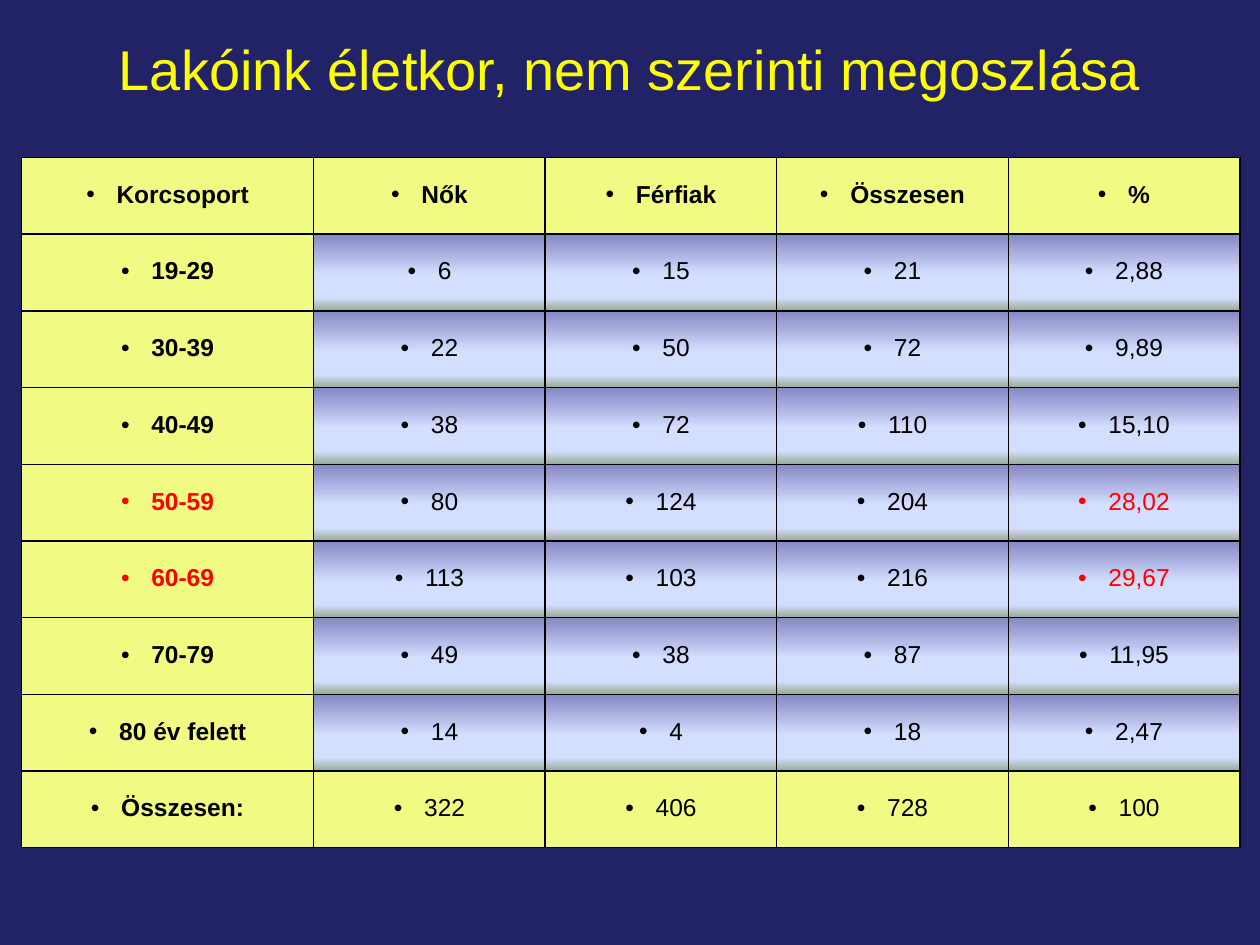
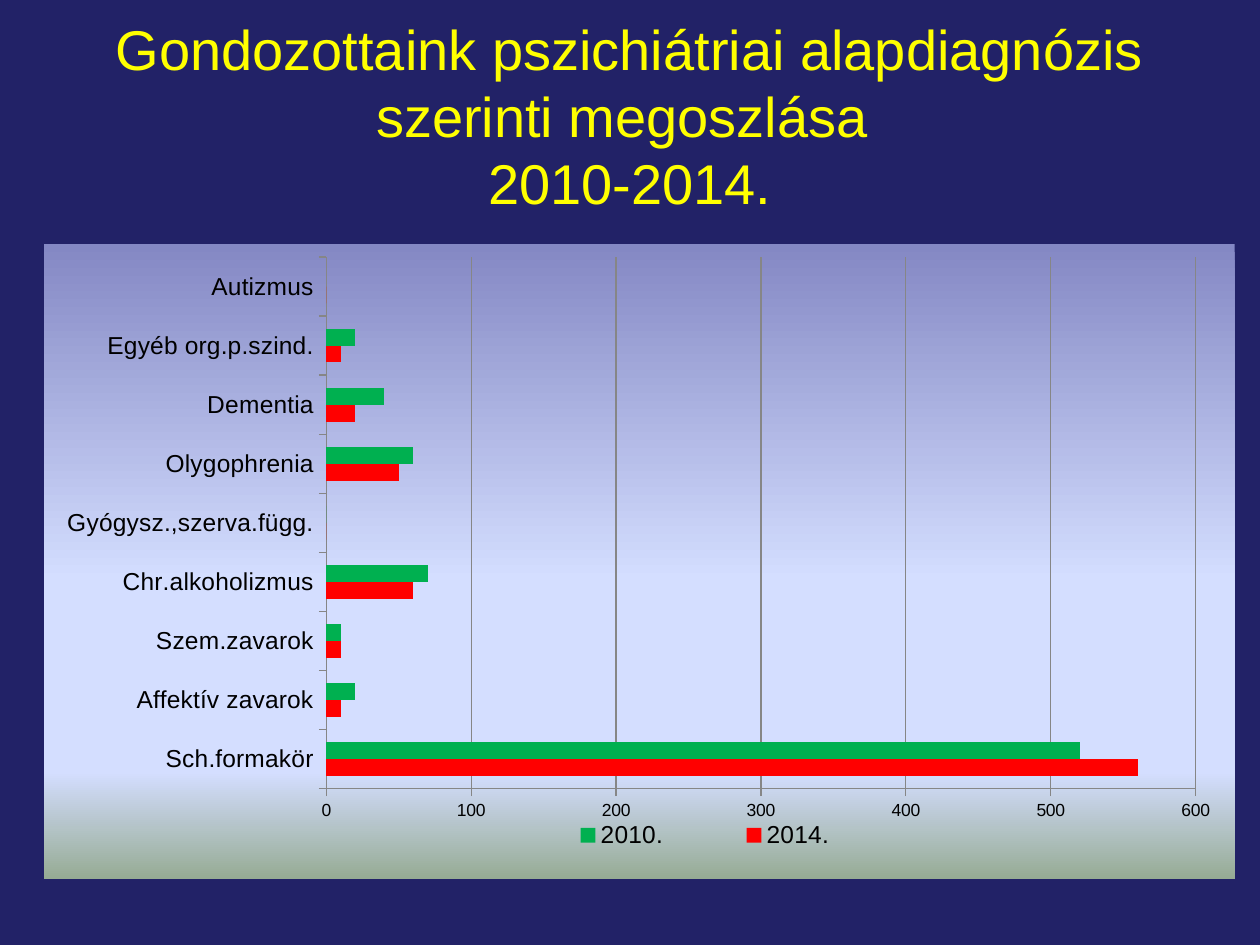
from dataclasses import dataclass

from lxml.etree import SubElement
from pptx import Presentation
from pptx.chart.data import CategoryChartData
from pptx.dml.color import RGBColor
from pptx.enum.chart import XL_CHART_TYPE as ChartType
from pptx.enum.chart import XL_LEGEND_POSITION as LegendPosition
from pptx.enum.chart import XL_TICK_MARK as TickMark
from pptx.enum.text import MSO_ANCHOR as Anchor
from pptx.enum.text import PP_ALIGN as Align
from pptx.oxml.ns import qn
from pptx.util import Inches, Pt

AGE_TITLE = "Lakóink életkor, nem szerinti megoszlása"
AGE_ROWS = [
    ("Korcsoport", "Nők", "Férfiak", "Összesen", "%"),
    ("19-29", "6", "15", "21", "2,88"),
    ("30-39", "22", "50", "72", "9,89"),
    ("40-49", "38", "72", "110", "15,10"),
    ("50-59", "80", "124", "204", "28,02"),
    ("60-69", "113", "103", "216", "29,67"),
    ("70-79", "49", "38", "87", "11,95"),
    ("80 év felett", "14", "4", "18", "2,47"),
    ("Összesen:", "322", "406", "728", "100"),
]
HIGHLIGHTED_AGES = {"50-59", "60-69"}
AGE_TABLE_BOX = (0.17, 1.25, 9.67, 5.48)
AGE_LABEL_WIDTH = 2.32
BULLET_INDENT = 0.24

DIAGNOSIS_TITLE = (
    "Gondozottaink pszichiátriai alapdiagnózis szerinti megoszlása \v2010-2014."
)
DIAGNOSES = [  # name, 2014, 2010
    ("Sch.formakör", 560, 520),
    ("Affektív zavarok", 10, 20),
    ("Szem.zavarok", 10, 10),
    ("Chr.alkoholizmus", 60, 70),
    ("Gyógysz.,szerva.függ.", 0, 0),
    ("Olygophrenia", 50, 60),
    ("Dementia", 20, 40),
    ("Egyéb org.p.szind.", 10, 20),
    ("Autizmus", 0, None),
]
DIAGNOSIS_CHART_BOX = (0.35, 1.94, 9.45, 5.04)
PLOT_BOX = (2.24, 0.1, 6.9, 4.22)  # inches inside the chart
LEGEND_BOX = (3.66, 4.54, 3.17, 0.3)


@dataclass(frozen=True)
class Theme:
    font: str = "Arial"
    background: str = "222267"
    title: str = "FFFF00"
    text: str = "000000"
    highlight: str = "FF0000"
    label_fill: str = "F1FA82"
    axis: str = "868686"
    series: tuple = (("2014.", "FF0000"), ("2010.", "00B050"))
    gradient: tuple = ((0, "8488C4"), (53, "D4DEFF"), (83, "D4DEFF"), (100, "96AB94"))
    title_size: int = 32
    body_size: int = 14
    axis_size: int = 10


THEME = Theme()


def rgb(value):
    return RGBColor.from_string(value)


def box_inches(box):
    return [Inches(length) for length in box]


def set_values(target, values):
    for name, value in values.items():
        setattr(target, name, value)


def style_font(font, size, color, bold=False):
    set_values(font, {"name": THEME.font, "size": Pt(size), "bold": bold})
    font.color.rgb = rgb(color)


def add_solid_fill(parent, color):
    SubElement(SubElement(parent, qn("a:solidFill")), qn("a:srgbClr"), val=color)


def add_gradient_fill(parent):
    """Append the theme's top-to-bottom gradient."""
    gradient = SubElement(parent, qn("a:gradFill"), rotWithShape="1")
    stops = SubElement(gradient, qn("a:gsLst"))
    for position, color in THEME.gradient:
        stop = SubElement(stops, qn("a:gs"), pos=str(position * 1000))
        SubElement(stop, qn("a:srgbClr"), val=color)
    SubElement(gradient, qn("a:lin"), ang="5400000", scaled="1")


def add_titled_slide(presentation, title, top, height):
    slide = presentation.slides.add_slide(presentation.slide_layouts[6])
    slide.background.fill.solid()
    slide.background.fill.fore_color.rgb = rgb(THEME.background)
    shape = slide.shapes.add_textbox(*box_inches((0.5, top, 9, height)))
    frame = shape.text_frame
    frame.word_wrap = True
    frame.vertical_anchor = Anchor.MIDDLE
    paragraph = frame.paragraphs[0]
    paragraph.text = title
    paragraph.alignment = Align.CENTER
    style_font(paragraph.font, THEME.title_size, THEME.title)
    for run in paragraph.runs:
        style_font(run.font, THEME.title_size, THEME.title)
    return slide


def write_cell(cell, text, color, bold):
    paragraph = cell.text_frame.paragraphs[0]
    set_values(paragraph, {"text": text, "alignment": Align.CENTER,
                           "line_spacing": 0.9, "space_before": Pt(4)})
    style_font(paragraph.runs[0].font, THEME.body_size, color, bold)
    properties = paragraph._p.get_or_add_pPr()
    properties.set("marL", str(Inches(BULLET_INDENT)))
    properties.set("indent", str(-Inches(BULLET_INDENT)))
    SubElement(properties, qn("a:buFont"), typeface=THEME.font)
    SubElement(properties, qn("a:buChar"), char="•")


def format_cell(cell, is_label):
    set_values(cell, {"vertical_anchor": Anchor.MIDDLE,
                      "margin_top": 0, "margin_bottom": 0,
                      "margin_left": Inches(0.07), "margin_right": Inches(0.07)})
    properties = cell._tc.get_or_add_tcPr()
    for side in ("a:lnL", "a:lnR", "a:lnT", "a:lnB"):
        add_solid_fill(SubElement(properties, qn(side), w=str(Pt(1))), THEME.text)
    if is_label:
        add_solid_fill(properties, THEME.label_fill)
    else:
        add_gradient_fill(properties)


def add_age_table(slide):
    row_count, column_count = len(AGE_ROWS), len(AGE_ROWS[0])
    table = slide.shapes.add_table(
        row_count, column_count, *box_inches(AGE_TABLE_BOX)).table
    table.first_row = table.horz_banding = False
    value_width = (AGE_TABLE_BOX[2] - AGE_LABEL_WIDTH) / (column_count - 1)
    for index, column in enumerate(table.columns):
        column.width = Inches(value_width if index else AGE_LABEL_WIDTH)
    for row_index, row in enumerate(AGE_ROWS):
        for column_index, text in enumerate(row):
            cell = table.cell(row_index, column_index)
            bold = row_index == 0 or column_index == 0
            highlighted = (row[0] in HIGHLIGHTED_AGES
                           and column_index in (0, column_count - 1))
            color = THEME.highlight if highlighted else THEME.text
            write_cell(cell, text, color, bold)
            format_cell(cell, bold or row_index == row_count - 1)


def set_layout(element, after, box, inner=False):
    """Place a chart part by its box in inches inside the chart."""
    for existing in element.findall(qn("c:layout")):
        element.remove(existing)
    layout = element.makeelement(qn("c:layout"), {})
    manual = SubElement(layout, qn("c:manualLayout"))
    if inner:
        SubElement(manual, qn("c:layoutTarget"), val="inner")
    for key in "xy":
        SubElement(manual, qn(f"c:{key}Mode"), val="edge")
    chart_size = DIAGNOSIS_CHART_BOX[2:] * 2
    for key, length, total in zip("xywh", box, chart_size):
        SubElement(manual, qn(f"c:{key}"), val=str(length / total))
    if after is None:
        element.insert(0, layout)
    else:
        after.addnext(layout)


def style_axis(axis, size):
    axis.major_tick_mark = TickMark.OUTSIDE
    axis.minor_tick_mark = TickMark.NONE
    style_font(axis.tick_labels.font, size, THEME.text)
    lines = [axis.format.line]
    if axis.has_major_gridlines:
        lines.append(axis.major_gridlines.format.line)
    for line in lines:
        line.color.rgb = rgb(THEME.axis)
        line.width = Pt(0.75)


def add_diagnosis_chart(slide):
    names, *series_values = zip(*DIAGNOSES)
    data = CategoryChartData()
    data.categories = names
    for (name, _), values in zip(THEME.series, series_values):
        data.add_series(name, values)
    chart = slide.shapes.add_chart(
        ChartType.BAR_CLUSTERED, *box_inches(DIAGNOSIS_CHART_BOX), data).chart
    chart.has_title = False
    style_font(chart.font, THEME.axis_size, THEME.text)

    plot = chart.plots[0]
    set_values(plot, {"gap_width": 150, "overlap": 0, "vary_by_categories": False})
    for series, (_, color) in zip(plot.series, THEME.series):
        series.format.fill.solid()
        series.format.fill.fore_color.rgb = rgb(color)

    chart.category_axis.has_major_gridlines = False
    set_values(chart.value_axis, {"has_major_gridlines": True, "minimum_scale": 0,
                                  "maximum_scale": 600, "major_unit": 100})
    style_axis(chart.category_axis, THEME.body_size)
    style_axis(chart.value_axis, THEME.axis_size)

    chart.has_legend = True
    legend = chart.legend
    legend.position = LegendPosition.BOTTOM
    legend.include_in_layout = False
    style_font(legend.font, THEME.body_size, THEME.text)

    chart_element = chart._chartSpace.find(qn("c:chart"))
    set_layout(chart_element.find(qn("c:plotArea")), None, PLOT_BOX, inner=True)
    legend_element = chart_element.find(qn("c:legend"))
    set_layout(legend_element, legend_element.find(qn("c:legendPos")), LEGEND_BOX)
    area_format = chart_element.makeelement(qn("c:spPr"), {})
    chart_element.addnext(area_format)
    add_gradient_fill(area_format)
    SubElement(SubElement(area_format, qn("a:ln")), qn("a:noFill"))


def main():
    presentation = Presentation()
    presentation.slide_width = Inches(10)
    presentation.slide_height = Inches(7.5)
    add_age_table(add_titled_slide(presentation, AGE_TITLE, 0.08, 0.92))
    add_diagnosis_chart(add_titled_slide(presentation, DIAGNOSIS_TITLE, 0, 1.83))
    presentation.save("out.pptx")


if __name__ == "__main__":
    main()
